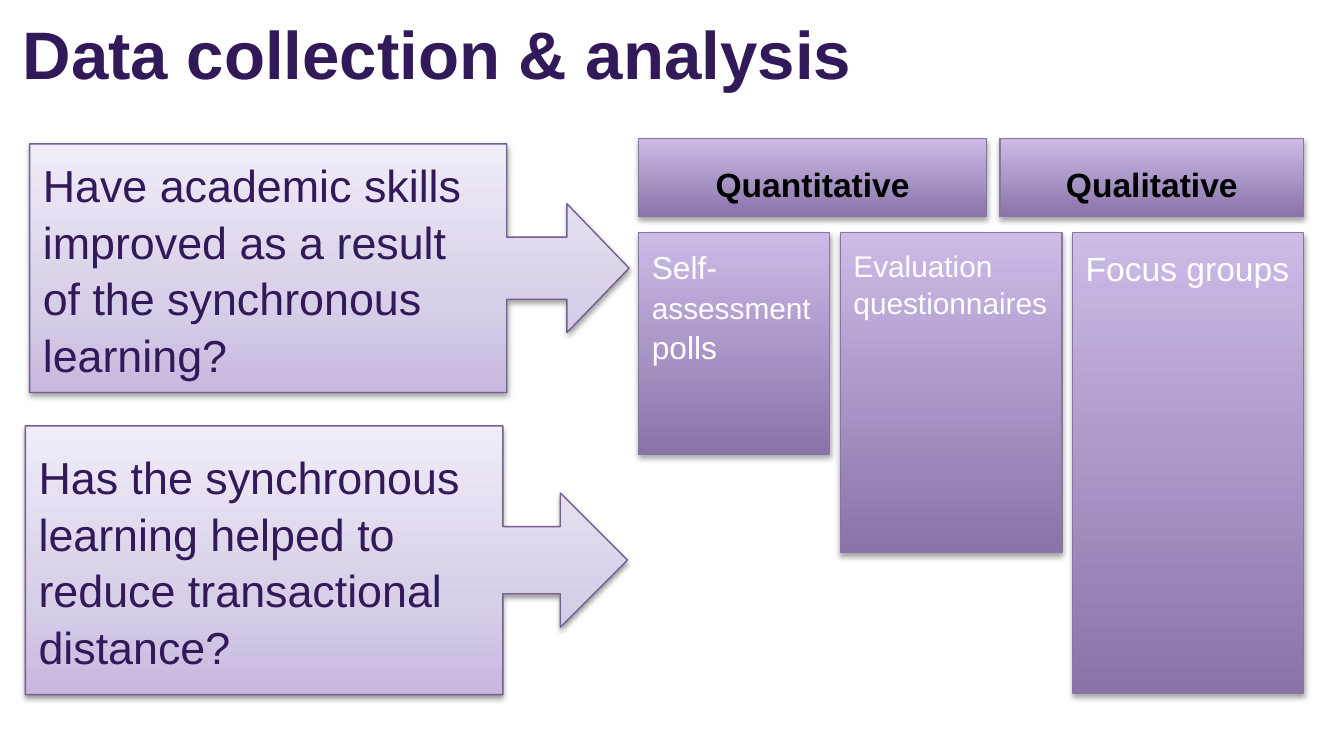
from dataclasses import dataclass

from lxml import etree
from pptx import Presentation
from pptx.dml.color import RGBColor
from pptx.enum.shapes import MSO_SHAPE
from pptx.enum.text import MSO_ANCHOR, PP_ALIGN
from pptx.oxml.ns import qn
from pptx.util import Cm, Pt

RECT = MSO_SHAPE.RECTANGLE
CALLOUT = MSO_SHAPE.RIGHT_ARROW_CALLOUT
TOP, MIDDLE = MSO_ANCHOR.TOP, MSO_ANCHOR.MIDDLE
LEFT, CENTER = PP_ALIGN.LEFT, PP_ALIGN.CENTER

INK = RGBColor(0x32, 0x19, 0x59)
WHITE = RGBColor(0xFF, 0xFF, 0xFF)
BLACK = RGBColor(0x00, 0x00, 0x00)
PALE_LINE = RGBColor(0x74, 0x5F, 0x92)
DEEP_LINE = RGBColor(0x88, 0x75, 0xA0)
PALE_STOPS = (
    (0, RGBColor(0xC7, 0xB8, 0xDF)),
    (35, RGBColor(0xD7, 0xCE, 0xE8)),
    (100, RGBColor(0xF0, 0xEC, 0xF7)),
)
DEEP_STOPS = ((0, RGBColor(0x8A, 0x73, 0xA9)), (100, RGBColor(0xCC, 0xBB, 0xE7)))

FONT = "Arial"
INSET = 0.25
GRID_LEFT, HEADER_TOP, METHOD_TOP = 12.07, 2.62, 4.39
HEADER_HEIGHT = 1.47


@dataclass(frozen=True)
class Run:
    text: str
    size: int


@dataclass(frozen=True)
class Look:
    stops: tuple
    line: RGBColor
    shadow_alpha: int
    shadow_distance: float


@dataclass(frozen=True)
class TextStyle:
    color: RGBColor
    anchor: MSO_ANCHOR
    align: PP_ALIGN = LEFT
    bold: bool = False
    top_inset: float = INSET
    spacing: float = 1.05


@dataclass(frozen=True)
class Block:
    left: float
    top: float
    width: float
    height: float
    paragraphs: tuple
    adjustments: tuple = ()


PALE = Look(PALE_STOPS, PALE_LINE, 38, 1.6)
DEEP = Look(DEEP_STOPS, DEEP_LINE, 35, 1.8)
TITLE_TEXT = TextStyle(INK, MIDDLE, bold=True, top_inset=0.13, spacing=1.0)
QUESTION_TEXT = TextStyle(INK, MIDDLE)
HEADER_TEXT = TextStyle(BLACK, MIDDLE, CENTER, True, 0.45)
METHOD_TEXT = TextStyle(WHITE, TOP)

TITLE = Block(0.18, -0.2, 23.27, 2.39, ((Run("Data collection & analysis", 36),),))
QUESTIONS = (
    Block(0.56, 2.72, 11.33, 4.7,
          ((Run("Have academic skills improved as a result of the synchronous learning?", 24),),),
          (0.25, 0.259, 0.25, 0.796)),
    Block(0.48, 8.05, 11.38, 5.08,
          ((Run("Has the synchronous learning helped to reduce transactional distance?", 24),),),
          (0.25, 0.25, 0.25, 0.793)),
)
METHODS = (
    Block(GRID_LEFT, METHOD_TOP, 3.61, 4.19,
          ((Run("Self-", 17),), (Run("assessment", 16), Run(" polls", 17)))),
    Block(15.88, METHOD_TOP, 4.19, 6.05, ((Run("Evaluation questionnaires", 16),),)),
    Block(20.27, METHOD_TOP, 4.37, 8.71, ((Run("Focus groups", 18),),)),
)
HEADERS = (
    Block(GRID_LEFT, HEADER_TOP, 6.58, HEADER_HEIGHT, ((Run("Quantitative", 18),),)),
    Block(18.9, HEADER_TOP, 5.74, HEADER_HEIGHT, ((Run("Qualitative", 18),),)),
)


def bounds(block: Block) -> tuple:
    """Return the position and size of a block."""
    return Cm(block.left), Cm(block.top), Cm(block.width), Cm(block.height)


def write_text(tf, block: Block, style: TextStyle) -> None:
    """Fill a text frame run by run."""
    tf.word_wrap = True
    tf.vertical_anchor = style.anchor
    tf.margin_left = tf.margin_right = Cm(INSET)
    tf.margin_top = Cm(style.top_inset)
    tf.margin_bottom = Cm(min(INSET, style.top_inset))
    for i, runs in enumerate(block.paragraphs):
        p = tf.add_paragraph() if i else tf.paragraphs[0]
        p.alignment = style.align
        p.line_spacing = style.spacing
        for run in runs:
            r = p.add_run()
            r.text = run.text
            r.font.name = FONT
            r.font.size = Pt(run.size)
            r.font.bold = style.bold
            r.font.color.rgb = style.color


def fill_gradient(sp, stops: tuple) -> None:
    """Give a shape an upward gradient through the stops."""
    sp.fill.gradient()
    sp.fill.gradient_angle = 90
    stop_list = sp._element.spPr.find(".//" + qn("a:gsLst"))
    for stop in list(stop_list):
        stop_list.remove(stop)
    for position, color in stops:
        stop = etree.SubElement(stop_list, qn("a:gs"), pos=str(position * 1000))
        etree.SubElement(stop, qn("a:srgbClr"), val=str(color))


def add_shadow(sp, look: Look) -> None:
    """Cast a soft shadow straight down."""
    sp.shadow.inherit = False
    effects = sp._element.spPr.find(qn("a:effectLst"))
    shadow = etree.SubElement(
        effects, qn("a:outerShdw"), blurRad=str(Pt(3.1)),
        dist=str(Pt(look.shadow_distance)), dir="5400000", rotWithShape="0")
    color = etree.SubElement(shadow, qn("a:srgbClr"), val=str(BLACK))
    etree.SubElement(color, qn("a:alpha"), val=str(look.shadow_alpha * 1000))


def draw_block(s, kind: MSO_SHAPE, block: Block, look: Look, style: TextStyle) -> None:
    """Draw a shaded shape with its text."""
    sp = s.shapes.add_shape(kind, *bounds(block))
    for i, value in enumerate(block.adjustments):
        sp.adjustments[i] = value
    fill_gradient(sp, look.stops)
    sp.line.color.rgb = look.line
    sp.line.width = Pt(0.75)
    add_shadow(sp, look)
    write_text(sp.text_frame, block, style)


def main() -> None:
    """Build the data collection slide."""
    prs = Presentation()
    prs.slide_width, prs.slide_height = Cm(25.4), Cm(14.29)
    s = prs.slides.add_slide(prs.slide_layouts[6])
    write_text(s.shapes.add_textbox(*bounds(TITLE)).text_frame, TITLE, TITLE_TEXT)
    for kind, blocks, look, style in (
        (CALLOUT, QUESTIONS, PALE, QUESTION_TEXT),
        (RECT, METHODS, DEEP, METHOD_TEXT),
        (RECT, HEADERS, DEEP, HEADER_TEXT),
    ):
        for block in blocks:
            draw_block(s, kind, block, look, style)
    prs.save("out.pptx")


if __name__ == "__main__":
    main()
